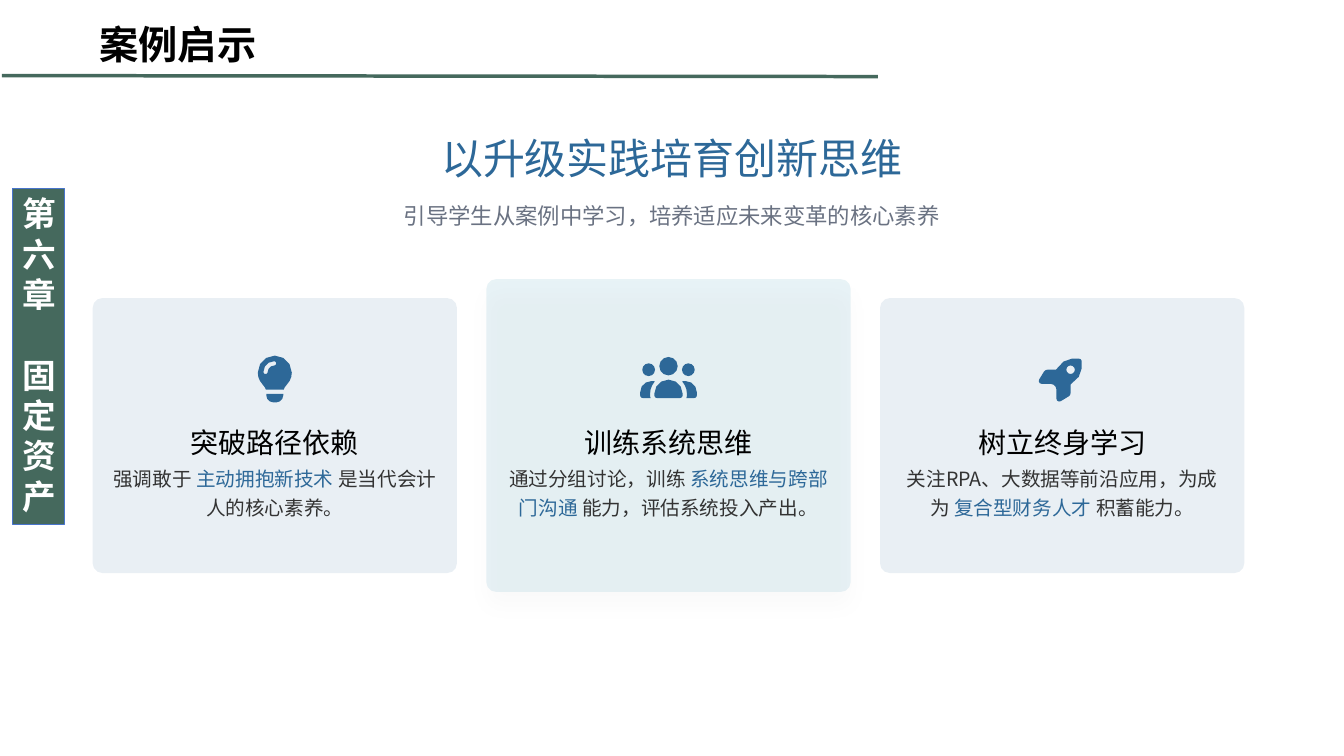
from math import cos, pi, sin

from lxml.etree import SubElement
from pptx import Presentation
from pptx.dml.color import RGBColor
from pptx.enum.shapes import MSO_CONNECTOR, MSO_SHAPE
from pptx.enum.text import MSO_ANCHOR, MSO_AUTO_SIZE, PP_ALIGN
from pptx.oxml.ns import qn
from pptx.util import Pt

FONT = "Noto Sans CJK SC"
BLUE, GREEN, GRAY, DARK = "2D6898", "45695D", "6A7282", "333333"
BLACK, WHITE = "000000", "FFFFFF"
ICON_GRID = 512


def color(hex_text):
    return RGBColor.from_string(hex_text)


def circle(center_x, center_y, radius, steps=12):
    angles = [2 * pi * step / steps for step in range(steps)]
    return [(center_x + radius * cos(a), center_y + radius * sin(a)) for a in angles]


def mirror(contour, width):
    return [tuple(width - value if index % 2 == 0 else value
                  for index, value in enumerate(segment)) for segment in contour]


def flatten(contour, steps=3):
    points = []
    for segment in contour:
        if len(segment) == 2:
            points.append(segment)
            continue
        controls = [points[-1], segment[:2], segment[2:4], segment[4:]]
        for step in range(1, steps + 1):
            t = step / steps
            weights = ((1 - t) ** 3, 3 * t * (1 - t) ** 2, 3 * t * t * (1 - t), t ** 3)
            points.append(tuple(sum(w * p[axis] for w, p in zip(weights, controls))
                                for axis in (0, 1)))
    return points


def write_text(frame, paragraphs, size=14, fill=BLACK, bold=False, align=PP_ALIGN.LEFT,
               line=1.0, gap=0, anchor=MSO_ANCHOR.TOP, margins=(7.2, 3.6, 7.2, 3.6)):
    frame.word_wrap = True
    frame.auto_size = MSO_AUTO_SIZE.NONE
    frame.vertical_anchor = anchor
    (frame.margin_left, frame.margin_top,
     frame.margin_right, frame.margin_bottom) = map(Pt, margins)
    for index, runs in enumerate(paragraphs):
        paragraph = frame.add_paragraph() if index else frame.paragraphs[0]
        paragraph.alignment = align
        paragraph.line_spacing = line
        paragraph.space_before = Pt(gap if index else 0)
        for words, run_fill in [(runs, fill)] if isinstance(runs, str) else runs:
            run = paragraph.add_run()
            run.text = words
            run.font.size = Pt(size)
            run.font.bold = bold
            run.font.color.rgb = color(run_fill)
            run.font.name = FONT
            SubElement(run.font._element, qn("a:ea"), typeface=FONT)


class SlideBuilder:
    def __init__(self, presentation):
        self.slide = presentation.slides.add_slide(presentation.slide_layouts[5])
        self.shapes = self.slide.shapes

    def title(self, text, left, top, width, height, **style):
        shape = self.shapes.title
        shape.left, shape.top, shape.width, shape.height = map(Pt, (left, top, width, height))
        write_text(shape.text_frame, [text], **style)

    def text(self, runs, left, top, width, height, **style):
        shape = self.shapes.add_textbox(*map(Pt, (left, top, width, height)))
        write_text(shape.text_frame, [runs], align=PP_ALIGN.CENTER,
                   anchor=MSO_ANCHOR.MIDDLE, margins=(0, 0, 0, 0), **style)

    def paint(self, shape, fill, line=None, opacity=100):
        shape.shadow.inherit = False
        shape.fill.solid()
        shape.fill.fore_color.rgb = color(fill)
        if opacity < 100:
            solid = shape.element.spPr.find(qn("a:solidFill"))
            SubElement(solid[0], qn("a:alpha"), val=str(opacity * 1000))
        if line:
            shape.line.color.rgb = color(line)
            shape.line.width = Pt(0.75)
        else:
            shape.line.fill.background()

    def rectangle(self, left, top, width, height, fill, line):
        shape = self.shapes.add_shape(MSO_SHAPE.RECTANGLE, *map(Pt, (left, top, width, height)))
        self.paint(shape, fill, line)
        return shape

    def card(self, left, top, width, height, fill, opacity, shadow):
        shape = self.shapes.add_shape(MSO_SHAPE.ROUNDED_RECTANGLE,
                                      *map(Pt, (left, top, width, height)))
        shape.adjustments[0] = 7 / height
        self.paint(shape, fill, opacity=opacity)
        if shadow:
            effects = shape.element.spPr.find(qn("a:effectLst"))
            outer = SubElement(effects, qn("a:outerShdw"), blurRad=str(Pt(15)),
                               dist=str(Pt(10)), dir="5400000", algn="bl", rotWithShape="0")
            tint = SubElement(outer, qn("a:srgbClr"), val=BLACK)
            SubElement(tint, qn("a:alpha"), val="10000")

    def icon(self, contours, grid_width, center, top, size):
        scale = Pt(size) / ICON_GRID
        outlines = [flatten(contour) for contour in contours]
        builder = self.shapes.build_freeform(*outlines[0][0], scale=scale)
        for index, outline in enumerate(outlines):
            if index:
                builder.move_to(*outline[0])
            builder.add_line_segments(outline[1:], close=True)
        left = round(Pt(center) - scale * grid_width / 2)
        self.paint(builder.convert_to_shape(left, Pt(top)), BLUE)

    def line(self, start_x, start_y, end_x, end_y, fill, width):
        connector = self.shapes.add_connector(
            MSO_CONNECTOR.STRAIGHT, *map(Pt, (start_x, start_y, end_x, end_y)))
        connector.line.color.rgb = color(fill)
        connector.line.width = Pt(width)
        SubElement(connector.element.spPr, qn("a:effectLst"))


BULB = [
    [(293, 384), (300, 362, 315, 341, 331, 324), (364, 290, 384, 243, 384, 192),
     (384, 86, 298, 0, 192, 0), (86, 0, 0, 86, 0, 192), (0, 243, 20, 290, 53, 324),
     (69, 341, 84, 362, 91, 384)],
    [(288, 432), (96, 432), (96, 448), (96, 492, 132, 528, 176, 528), (208, 528),
     (252, 528, 288, 492, 288, 448)],
    [(184, 112), (144, 112, 112, 144, 112, 184), (112, 197, 101, 208, 88, 208),
     (75, 208, 64, 197, 64, 184), (64, 118, 118, 64, 184, 64),
     (197, 64, 208, 75, 208, 88), (208, 101, 197, 112, 184, 112)],
]
SIDE_BODY = [
    (0, 416), (0, 345, 57, 288, 128, 288), (141, 288, 153, 290, 165, 293),
    (132, 330, 112, 379, 112, 432), (112, 448), (112, 459, 114, 470, 119, 480),
    (32, 480), (14, 480, 0, 466, 0, 448),
]
TEAM = [
    circle(320, 120, 104), circle(96, 160, 72), circle(544, 160, 72),
    SIDE_BODY, mirror(SIDE_BODY, 640),
    [(160, 432), (160, 344, 232, 272, 320, 272), (408, 272, 480, 344, 480, 432),
     (480, 448), (480, 466, 466, 480, 448, 480), (192, 480),
     (174, 480, 160, 466, 160, 448)],
]
ROCKET = [
    [(128, 320), (25, 320), (0, 320, -16, 293, -3, 271), (50, 183),
     (59, 169, 74, 160, 91, 160), (186, 160), (262, 31, 376, 25, 452, 36),
     (465, 38, 475, 48, 476, 60), (487, 136, 481, 250, 352, 326), (352, 421),
     (352, 438, 343, 453, 329, 462), (241, 515), (219, 528, 192, 512, 192, 488),
     (192, 384), (192, 349, 163, 320, 128, 320)],
    circle(352, 160, 48),
]
CARDS = [
    (BULB, 384, "突破路径依赖", "强调敢于", " 主动拥抱新技术 ", "是当代会计人的核心素养。"),
    (TEAM, 640, "训练系统思维", "通过分组讨论，训练", " 系统思维与跨部门沟通 ",
     "能力，评估系统投入产出。"),
    (ROCKET, 512, "树立终身学习", "关注RPA、大数据等前沿应用，为成为", " 复合型财务人才 ",
     "积蓄能力。"),
]


def main():
    presentation = Presentation()
    presentation.slide_width, presentation.slide_height = Pt(960), Pt(540)
    builder = SlideBuilder(presentation)
    builder.line(1.4, 54, 627, 54.7, GREEN, 2.5)
    chapter = builder.rectangle(9, 134.6, 37, 239.8, GREEN, "4874CB")
    write_text(chapter.text_frame, ["第六章", "固定资产"], size=24, fill=WHITE, bold=True,
               gap=28.8)
    builder.title("案例启示", 64, 10.8, 514, 41, size=28, bold=True)
    builder.text("以升级实践培育创新思维", 0, 95, 960, 36, size=30, fill=BLUE)
    builder.text("引导学生从案例中学习，培养适应未来变革的核心素养", 0, 139, 960, 24,
                 size=16, fill=GRAY, line=1.3)
    card_width, middle = 260.2, 311.1
    for index, (icon, grid_width, heading, before, key, after) in enumerate(CARDS):
        center = 196.3 + 281.2 * index
        featured = index == 1
        height = 223.4 if featured else 196.4
        builder.card(center - card_width / 2, middle - height / 2, card_width, height,
                     "8EC3D6" if featured else BLUE, 20 if featured else 10, featured)
        builder.icon(icon, grid_width, center, 254, 32.4)
        builder.text(heading, center - 133.5, 300.2, 267, 25, size=20, line=1.3)
        builder.text([(before, DARK), (key, BLUE), (after, DARK)],
                     center - 115.9, 332.6, 231.8, 36, line=1.2)
    presentation.save("out.pptx")


if __name__ == "__main__":
    main()
